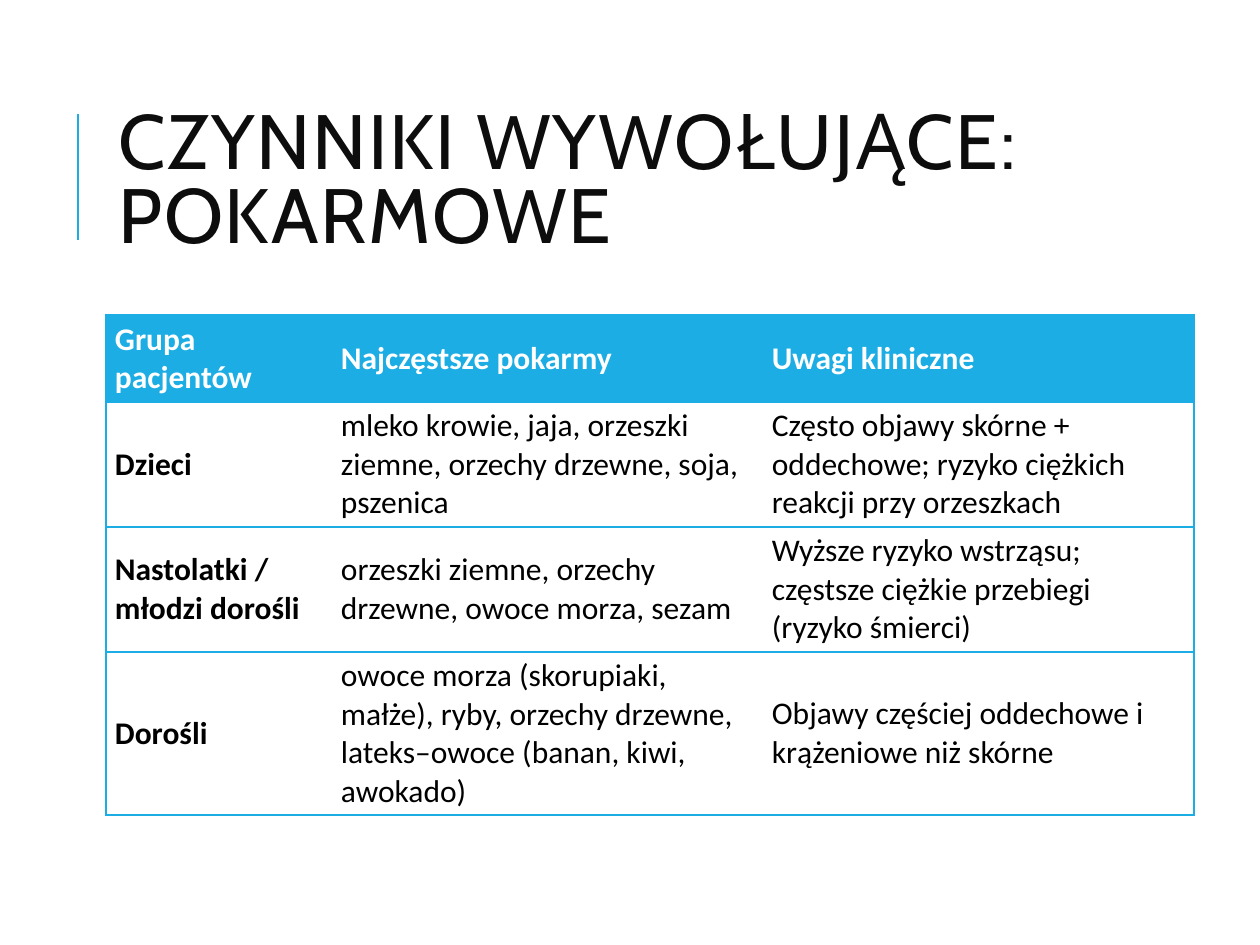
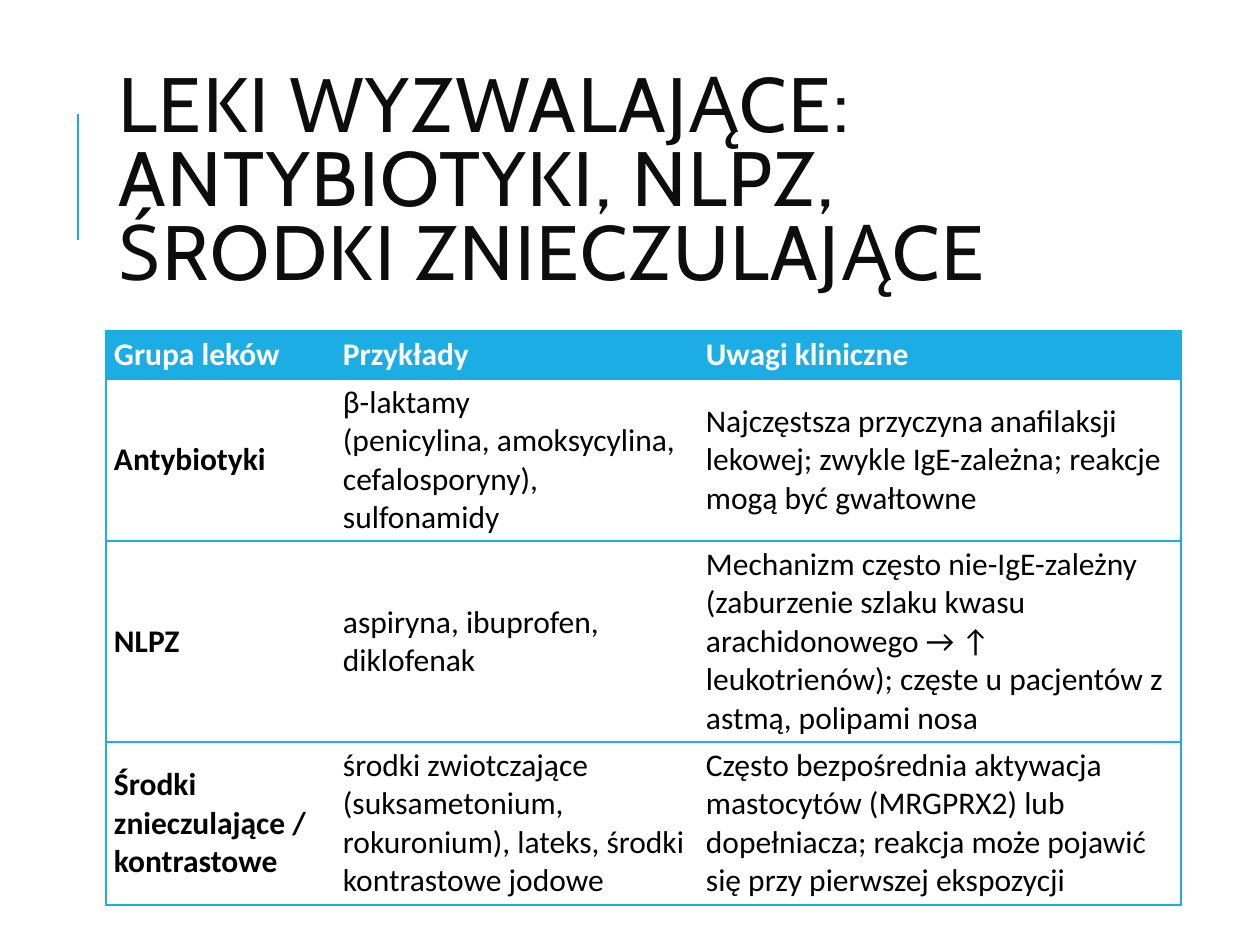
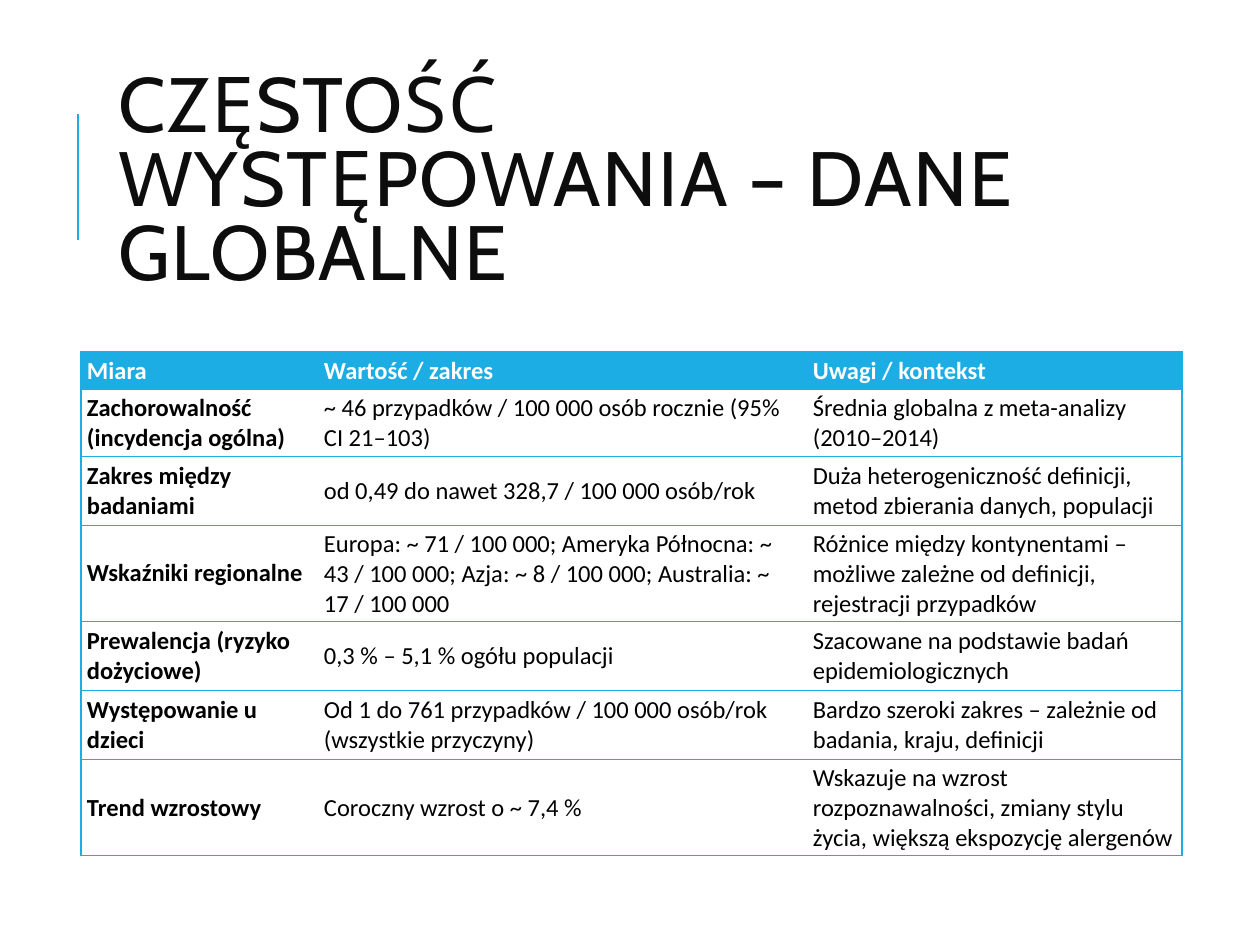
"""Build three slides on anaphylaxis triggers and incidence."""
from lxml.etree import SubElement as Sub
from pptx import Presentation
from pptx.dml.color import RGBColor
from pptx.enum.shapes import MSO_CONNECTOR as Link
from pptx.enum.text import MSO_ANCHOR as Anchor
from pptx.oxml.ns import qn
from pptx.util import Emu, Pt

BLUE = RGBColor(0x1C, 0xAD, 0xE4)
INK = RGBColor(0x0D, 0x0D, 0x0D)
BLACK = RGBColor(0, 0, 0)
WHITE = RGBColor(0xFF, 0xFF, 0xFF)

SIZE = (1260, 945)
TITLE = (106, 81, 1004, 207)
BAR = (78, 240, 78, 114)

PAGES = [
    {
        "title": "CZYNNIKI WYWOŁUJĄCE: POKARMOWE",
        "at": (106, 315),
        "cols": (226, 431, 431),
        "rows": (87, 125, 125, 163),
        "pad": (9, 5),
        "size": 18,
        "cells": [
            ("Grupa pacjentów", "Najczęstsze pokarmy", "Uwagi kliniczne"),
            ("Dzieci",
             "mleko krowie, jaja, orzeszki ziemne, orzechy drzewne, soja, pszenica",
             "Często objawy skórne + oddechowe; ryzyko ciężkich reakcji przy orzeszkach"),
            ("Nastolatki / młodzi dorośli",
             "orzeszki ziemne, orzechy drzewne, owoce morza, sezam",
             "Wyższe ryzyko wstrząsu; częstsze ciężkie przebiegi (ryzyko śmierci)"),
            ("Dorośli",
             "owoce morza (skorupiaki, małże), ryby, orzechy drzewne, "
             "lateks–owoce (banan, kiwi, awokado)",
             "Objawy częściej oddechowe i krążeniowe niż skórne"),
        ],
    },
    {
        "title": "LEKI WYZWALAJĄCE: ANTYBIOTYKI, NLPZ, ŚRODKI ZNIECZULAJĄCE",
        "at": (106, 331),
        "cols": (229, 363, 483),
        "rows": (48, 162, 201, 163),
        "pad": (8, 4),
        "size": 18,
        "cells": [
            ("Grupa leków", "Przykłady", "Uwagi kliniczne"),
            ("Antybiotyki",
             "β-laktamy\v(penicylina, amoksycylina, cefalosporyny), sulfonamidy",
             "Najczęstsza przyczyna anafilaksji lekowej; zwykle IgE-zależna; "
             "reakcje mogą być gwałtowne"),
            ("NLPZ",
             "aspiryna, ibuprofen, diklofenak",
             "Mechanizm często nie-IgE-zależny (zaburzenie szlaku kwasu "
             "arachidonowego → ↑ leukotrienów); częste u pacjentów z astmą, "
             "polipami nosa"),
            ("Środki znieczulające / kontrastowe",
             "środki zwiotczające (suksametonium, rokuronium), lateks, "
             "środki kontrastowe jodowe",
             "Często bezpośrednia aktywacja mastocytów (MRGPRX2) lub dopełniacza; "
             "reakcja może pojawić się przy pierwszej ekspozycji"),
        ],
    },
    {
        "title": "CZĘSTOŚĆ WYSTĘPOWANIA – DANE GLOBALNE",
        "at": (81, 352),
        "cols": (237, 489, 375),
        "rows": (37, 67, 69, 96, 69, 69, 96),
        "pad": (6, 4),
        "size": 14,
        "cells": [
            ("Miara", "Wartość / zakres", "Uwagi / kontekst"),
            ("Zachorowalność (incydencja ogólna)",
             "~ 46 przypadków / 100 000 osób rocznie (95% CI 21–103)",
             "Średnia globalna z meta-analizy (2010–2014)"),
            ("Zakres między badaniami",
             "od 0,49 do nawet 328,7 / 100 000 osób/rok",
             "Duża heterogeniczność definicji, metod zbierania danych, populacji"),
            ("Wskaźniki regionalne",
             "Europa: ~ 71 / 100 000; Ameryka Północna: ~ 43 / 100 000; "
             "Azja: ~ 8 / 100 000; Australia: ~ 17 / 100 000",
             "Różnice między kontynentami – możliwe zależne od definicji, "
             "rejestracji przypadków"),
            ("Prewalencja (ryzyko dożyciowe)",
             "0,3 % – 5,1 % ogółu populacji",
             "Szacowane na podstawie badań epidemiologicznych"),
            ("Występowanie u dzieci",
             "Od 1 do 761 przypadków / 100 000 osób/rok (wszystkie przyczyny)",
             "Bardzo szeroki zakres – zależnie od badania, kraju, definicji"),
            ("Trend wzrostowy",
             "Coroczny wzrost o ~ 7,4 %",
             "Wskazuje na wzrost rozpoznawalności, zmiany stylu życia, "
             "większą ekspozycję alergenów"),
        ],
    },
]


def px(*nums):
    return [Emu(round(n * 914400 / 126)) for n in nums]


def put(obj, **vals):
    for key, val in vals.items():
        setattr(obj, key, val)


def style(font, color, **vals):
    put(font, **vals)
    font.color.rgb = color


def add_head(slide, text):
    bar = slide.shapes.add_connector(Link.STRAIGHT, *px(*BAR))
    bar.line.color.rgb = BLUE
    bar.line.width = Pt(1.5)
    Sub(bar._element.spPr, qn("a:effectLst"))
    frame = slide.shapes.add_textbox(*px(*TITLE)).text_frame
    put(frame, word_wrap=True, vertical_anchor=Anchor.MIDDLE)
    para = frame.paragraphs[0]
    para.line_spacing = 0.8
    run = para.add_run()
    run.text = text
    style(run.font, INK, name="Cabin", size=Pt(44))
    run.font._element.set("spc", "100")


def add_edges(cell, first, last):
    props = cell._tc.get_or_add_tcPr()
    for side, shown in (("L", first), ("R", last), ("T", True), ("B", True)):
        edge = Sub(props, qn(f"a:ln{side}"), w=str(Pt(1)))
        if shown:
            fill = Sub(edge, qn("a:solidFill"))
            Sub(fill, qn("a:srgbClr"), val=str(BLUE))
        else:
            Sub(edge, qn("a:noFill"))


def add_grid(slide, page):
    cols, rows, cells = page["cols"], page["rows"], page["cells"]
    box = px(*page["at"], sum(cols), sum(rows))
    grid = slide.shapes.add_table(len(rows), len(cols), *box).table
    put(grid, first_row=False, horz_banding=False)
    for col, wide in zip(grid.columns, px(*cols)):
        col.width = wide
    for row, high in zip(grid.rows, px(*rows)):
        row.height = high
    side, edge = px(*page["pad"])
    for r, line in enumerate(cells):
        for c, text in enumerate(line):
            cell = grid.cell(r, c)
            put(cell, margin_left=side, margin_right=side, margin_top=edge,
                margin_bottom=edge, vertical_anchor=Anchor.MIDDLE)
            add_edges(cell, c == 0, c == len(cols) - 1)
            cell.fill.solid()
            cell.fill.fore_color.rgb = WHITE if r else BLUE
            cell.text_frame.text = text
            for run in cell.text_frame.paragraphs[0].runs:
                style(run.font, BLACK if r else WHITE, name="Calibri",
                      size=Pt(page["size"]), bold=r == 0 or c == 0)


def main():
    deck = Presentation()
    deck.slide_width, deck.slide_height = px(*SIZE)
    for page in PAGES:
        slide = deck.slides.add_slide(deck.slide_layouts[6])
        add_head(slide, page["title"])
        add_grid(slide, page)
    deck.save("out.pptx")


if __name__ == "__main__":
    main()
